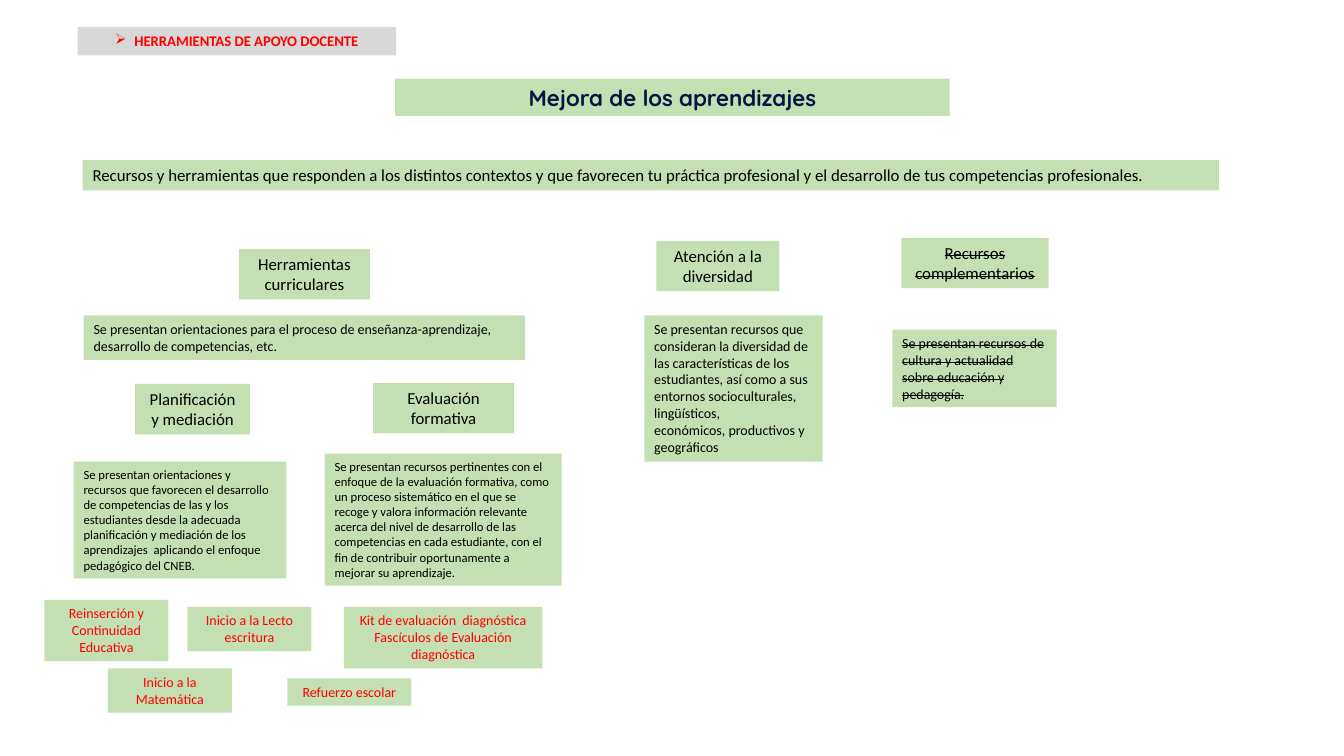
from pptx import Presentation
from pptx import util as u
from pptx.dml.color import RGBColor
from pptx.enum import shapes, text
from pptx.oxml import parse_xml
from pptx.oxml.ns import nsdecls

GREEN = RGBColor(0xC4, 0xE0, 0xB2)
GREY = RGBColor(0xD8, 0xD8, 0xD8)
NAVY = RGBColor(0x01, 0x16, 0x43)
RED = RGBColor(0xFF, 0x00, 0x00)
BLACK = RGBColor(0x00, 0x00, 0x00)

CENTER = text.PP_ALIGN.CENTER
LEFT = text.PP_ALIGN.LEFT
JUSTIFY = text.PP_ALIGN.JUSTIFY

deck = Presentation()
deck.slide_width = u.Inches(13.33)
deck.slide_height = u.Inches(7.5)
slide = deck.slides.add_slide(deck.slide_layouts[5])


def write(panel, wording, size, color=BLACK, align=LEFT, fill=GREEN, font="Calibri", bold=False):
    panel.fill.solid()
    panel.fill.fore_color.rgb = fill
    panel.line.fill.background()
    frame = panel.text_frame
    frame.text = wording
    frame.word_wrap = True
    frame.auto_size = text.MSO_AUTO_SIZE.NONE
    frame.vertical_anchor = text.MSO_ANCHOR.TOP
    frame.margin_left = frame.margin_right = u.Inches(0.1)
    frame.margin_top = frame.margin_bottom = u.Inches(0.05)
    for paragraph in frame.paragraphs:
        paragraph.alignment = align
        paragraph.line_spacing = 1.0
        for run in paragraph.runs:
            run.font.size = u.Pt(size)
            run.font.name = font
            run.font.bold = bold
            run.font.color.rgb = color


def add_panel(place, wording, size, **look):
    panel = slide.shapes.add_shape(shapes.MSO_SHAPE.RECTANGLE, *map(u.Inches, place))
    panel.shadow.inherit = False
    write(panel, wording, size, **look)
    return panel


mejora = slide.shapes.title
mejora.left, mejora.top, mejora.width, mejora.height = map(u.Inches, (3.92, 0.78, 5.5, 0.37))
write(mejora, "Mejora de los aprendizajes", 16, NAVY, CENTER, font="Quicksand", bold=True)

add_panel(
    (0.82, 1.59, 11.27, 0.3),
    "Recursos y herramientas que responden a los distintos contextos y que favorecen tu práctica "
    "profesional y el desarrollo de tus competencias profesionales.",
    12, align=JUSTIFY)

categories = [
    ((1.34, 3.81, 1.14, 0.5), "Planificación y mediación"),
    ((3.7, 3.8, 1.4, 0.5), "Evaluación formativa"),
    ((6.51, 2.39, 1.22, 0.5), "Atención a la diversidad"),
    ((2.37, 2.47, 1.3, 0.5), "Herramientas curriculares"),
]
for place, wording in categories:
    add_panel(place, wording, 12, align=CENTER)

descriptions = [
    ((6.39, 3.13, 1.77, 1.45), 10,
     "Se presentan recursos que consideran la diversidad de las características de los estudiantes, "
     "así como a sus entornos socioculturales, lingüísticos,\n"
     "económicos, productivos y geográficos"),
    ((3.22, 4.5, 2.35, 1.31), 9,
     "Se presentan recursos pertinentes con el enfoque de la evaluación formativa, como un proceso "
     "sistemático en el que se recoge y valora información relevante acerca del nivel de desarrollo "
     "de las competencias en cada estudiante, con el fin de contribuir oportunamente a mejorar su "
     "aprendizaje."),
    ((0.73, 4.58, 2.11, 1.16), 9,
     "Se presentan orientaciones y recursos que favorecen el desarrollo de competencias de las y los "
     "estudiantes desde la adecuada planificación y mediación de los aprendizajes  aplicando el "
     "enfoque pedagógico del CNEB."),
    ((0.83, 3.13, 4.38, 0.44), 10,
     "Se presentan orientaciones para el proceso de enseñanza-aprendizaje, desarrollo de "
     "competencias, etc."),
]
for place, size, wording in descriptions:
    add_panel(place, wording, size)

complementarios = [
    add_panel((8.94, 2.36, 1.46, 0.5), "Recursos complementarios", 12, align=CENTER),
    add_panel((8.85, 3.27, 1.63, 0.77),
              "Se presentan recursos de cultura y actualidad sobre educación y pedagogía.", 10),
]
for struck in complementarios:
    struck.text_frame.paragraphs[0].runs[0]._r.get_or_add_rPr().set("strike", "sngStrike")

materials = [
    ((1.86, 6.02, 1.23, 0.44), "Inicio a la Lecto escritura"),
    ((3.41, 6.02, 1.97, 0.61),
     "Kit de evaluación  diagnóstica\nFascículos de Evaluación diagnóstica"),
    ((0.44, 5.95, 1.23, 0.61), "Reinserción y Continuidad Educativa"),
    ((1.07, 6.63, 1.23, 0.44), "Inicio a la Matemática"),
    ((2.85, 6.73, 1.23, 0.27), "Refuerzo escolar"),
]
for place, wording in materials:
    add_panel(place, wording, 10, color=RED, align=CENTER)

apoyo = add_panel((0.77, 0.27, 3.16, 0.28), "HERRAMIENTAS DE APOYO DOCENTE", 10.5,
                  color=RED, align=CENTER, fill=GREY, bold=True)
apoyo_layout = apoyo.text_frame.paragraphs[0]._p.get_or_add_pPr()
apoyo_layout.set("marL", str(u.Inches(0.19)))
apoyo_layout.set("indent", str(-u.Inches(0.19)))
apoyo_layout.append(parse_xml(f'<a:buClr {nsdecls("a")}><a:srgbClr val="{RED}"/></a:buClr>'))
apoyo_layout.append(parse_xml(f'<a:buChar {nsdecls("a")} char="➢"/>'))

deck.save("out.pptx")
